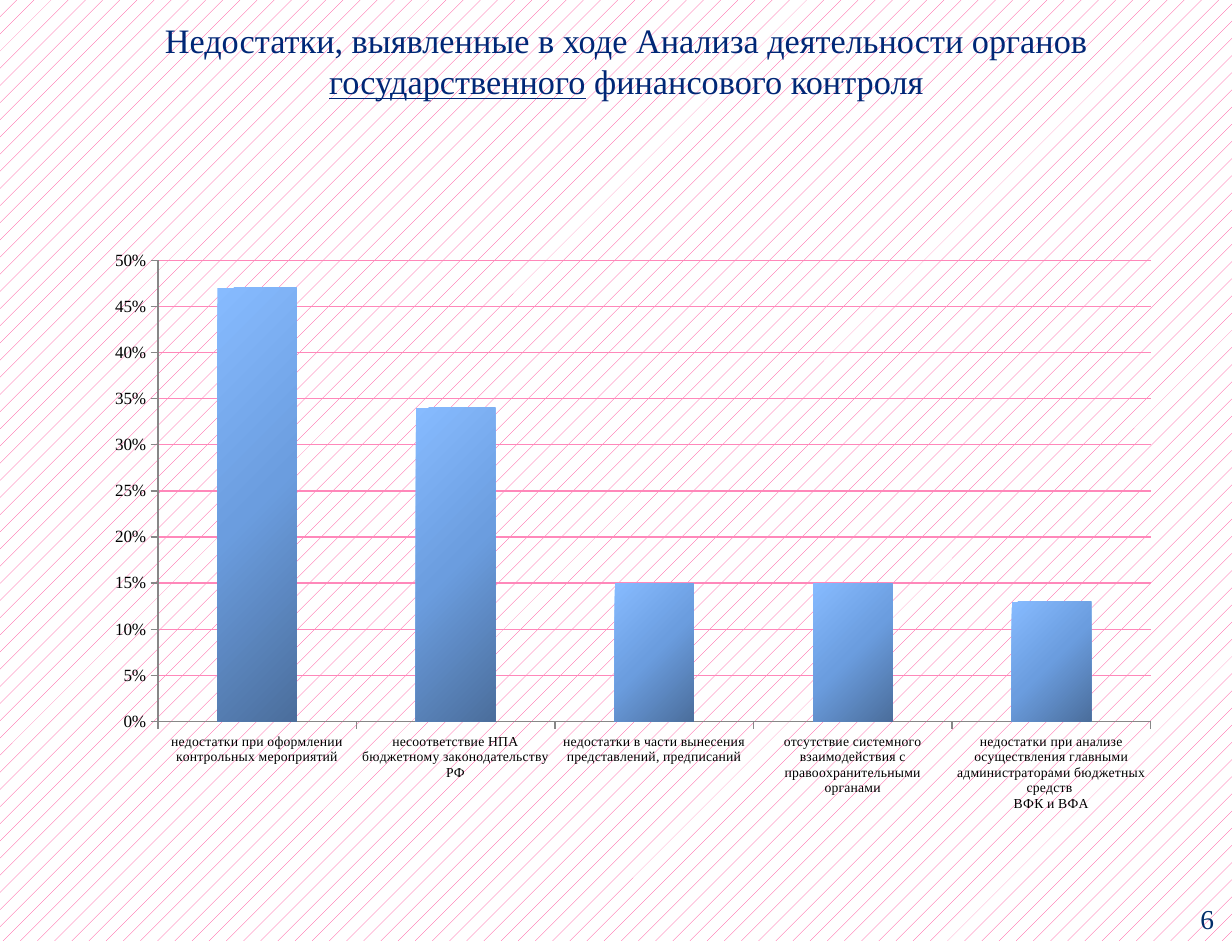
import pptx
import pptx.chart.data
import pptx.dml.color
import pptx.enum.chart
import pptx.enum.dml
import pptx.enum.text
import pptx.oxml
import pptx.oxml.ns
import pptx.util
from pptx.util import Cm

COLORS = {
    "title": "002776",
    "number": "002D6A",
    "text": "000000",
    "axis": "878787",
    "grid": "FF88BA",
    "hatch": "FF388C",
    "paper": "FFFFFF",
    "dark": "4B6E9C",
    "mid": "6B9DDF",
    "light": "87BBFF",
}
SERIF = "Times New Roman"
SANS = "Calibri"

FLAWS = {
    "недостатки при оформлении контрольных мероприятий": 47,
    "несоответствие НПА бюджетному законодательству РФ": 34,
    "недостатки в части вынесения представлений, предписаний": 15,
    "отсутствие системного взаимодействия с правоохранительными органами": 15,
    "недостатки при анализе осуществления главными администраторами "
    "бюджетных средств \nВФК и ВФА": 13,
}


def color(name):
    return pptx.dml.color.RGBColor.from_string(COLORS[name])


class Page:
    def __init__(self, deck):
        self.slide = deck.slides.add_slide(deck.slide_layouts[5])

    def style(self, font, size, name, face=SERIF):
        font.name = face
        font.size = pptx.util.Pt(size)
        font.color.rgb = color(name)

    def paper(self):
        fill = self.slide.background.fill
        fill.patterned()
        fill.pattern = pptx.enum.dml.MSO_PATTERN.PERCENT_5
        fill.fore_color.rgb = color("hatch")
        fill.back_color.rgb = color("paper")

    def title(self, parts, x, y, w, h):
        """Fill the title with (text, underlined) parts."""
        shape = self.slide.shapes.title
        shape.left, shape.top, shape.width, shape.height = x, y, w, h
        frame = shape.text_frame
        frame.word_wrap = True
        frame.auto_size = pptx.enum.text.MSO_AUTO_SIZE.NONE
        frame.vertical_anchor = pptx.enum.text.MSO_ANCHOR.TOP
        frame.margin_left = frame.margin_right = Cm(0.18)
        frame.margin_top = frame.margin_bottom = Cm(0.1)
        line = frame.paragraphs[0]
        line.alignment = pptx.enum.text.PP_ALIGN.CENTER
        for text, under in parts:
            run = line.add_run()
            run.text = text
            self.style(run.font, 20, "title")
            run.font.underline = under

    def number(self, text, x, y, w, h):
        frame = self.slide.shapes.add_textbox(x, y, w, h).text_frame
        frame.word_wrap = True
        frame.text = text
        self.style(frame.paragraphs[0].runs[0].font, 16, "number")

    def chart(self, flaws, x, y, w, h):
        data = pptx.chart.data.CategoryChartData()
        data.categories = list(flaws)
        data.add_series("Series 1", list(flaws.values()))
        data.add_series("Series 2", [100 - value for value in flaws.values()])
        kind = pptx.enum.chart.XL_CHART_TYPE.COLUMN_STACKED_100
        chart = self.slide.shapes.add_chart(kind, x, y, w, h, data).chart
        chart.has_legend = False
        chart.has_title = False
        self.style(chart.font, 18, "text", SANS)

        plot = chart.plots[0]
        plot.gap_width = 150
        plot.overlap = 100
        plot.vary_by_categories = False
        share, rest = plot.series
        self.glow(share.format.fill, share)
        rest.format.fill.background()

        for axis, size in ((chart.category_axis, 8), (chart.value_axis, 10)):
            axis.major_tick_mark = pptx.enum.chart.XL_TICK_MARK.OUTSIDE
            axis.format.line.color.rgb = color("axis")
            self.style(axis.tick_labels.font, size, "text")
        scale = chart.value_axis
        scale.minimum_scale = 0
        scale.maximum_scale = 0.5
        scale.major_unit = 0.05
        scale.tick_labels.number_format = "0%"
        scale.tick_labels.number_format_is_linked = False
        scale.has_major_gridlines = True
        grid = scale.major_gridlines.format.line
        grid.color.rgb = color("grid")
        grid.width = pptx.util.Pt(0.75)
        self.place(chart, x=0.085, y=0.05, w=0.89, h=0.77)

    def glow(self, fill, series):
        """Give the bars a round gradient centred on the lower right corner."""
        fill.background()
        stops = "".join(
            f'<a:gs pos="{pos}"><a:srgbClr val="{COLORS[name]}"/></a:gs>'
            for pos, name in ((0, "dark"), (50000, "mid"), (100000, "light"))
        )
        grad = pptx.oxml.parse_xml(
            f'<a:gradFill {pptx.oxml.ns.nsdecls("a")} rotWithShape="1">'
            f"<a:gsLst>{stops}</a:gsLst>"
            '<a:path path="circle"><a:fillToRect l="100000" t="100000"/></a:path>'
            "</a:gradFill>"
        )
        blank = next(series.format._element.iter(pptx.oxml.ns.qn("a:noFill"))) \
            if hasattr(series.format, "_element") \
            else next(series._element.iter(pptx.oxml.ns.qn("a:noFill")))
        blank.getparent().replace(blank, grad)

    def place(self, chart, **box):
        """Fix the inner plot area as shares of the chart."""
        area = chart._chartSpace.chart.plotArea
        for old in area.findall(pptx.oxml.ns.qn("c:layout")):
            area.remove(old)
        modes = '<c:xMode val="edge"/><c:yMode val="edge"/>'
        sides = "".join(f'<c:{key} val="{val}"/>' for key, val in box.items())
        area.insert(0, pptx.oxml.parse_xml(
            f'<c:layout {pptx.oxml.ns.nsdecls("c")}><c:manualLayout>'
            f'<c:layoutTarget val="inner"/>{modes}{sides}'
            "</c:manualLayout></c:layout>"
        ))


def main():
    deck = pptx.Presentation()
    deck.slide_width = Cm(25.4)
    deck.slide_height = Cm(19.4)
    page = Page(deck)
    page.paper()
    page.chart(FLAWS, Cm(1.3), Cm(4.75), Cm(23), Cm(12.35))
    page.title(
        [
            ("Недостатки, выявленные в ходе Анализа деятельности органов ", False),
            ("государственного", True),
            (" финансового контроля", False),
        ],
        Cm(3.05), Cm(0.3), Cm(19.73), Cm(1.9),
    )
    page.number("6", Cm(24.5), Cm(18.47), Cm(0.8), Cm(0.94))
    deck.save("out.pptx")


if __name__ == "__main__":
    main()
